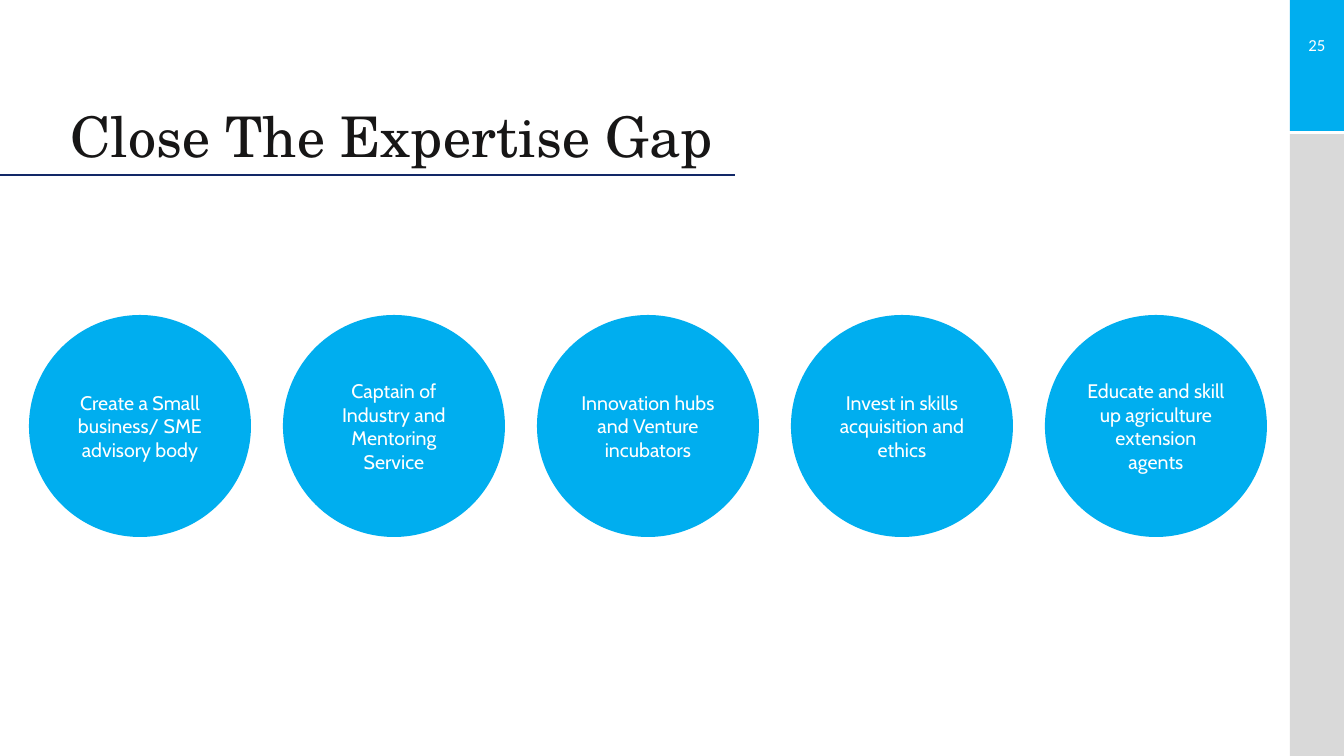
"""Build the slide on closing the expertise gap."""
from dataclasses import dataclass

import pptx
import pptx.dml.color
import pptx.enum.shapes
import pptx.enum.text
import pptx.oxml
import pptx.util

EMU_PER_PX = 914400 / 100.8
SHAPE = pptx.enum.shapes.MSO_SHAPE
ALIGN = pptx.enum.text.PP_ALIGN
ANCHOR = pptx.enum.text.MSO_ANCHOR
EFFECTS = '<a:effectLst xmlns:a="http://schemas.openxmlformats.org/drawingml/2006/main"/>'


def px(n):
    return pptx.util.Emu(round(n * EMU_PER_PX))


def rgb(value):
    return pptx.dml.color.RGBColor.from_string(value)


@dataclass(frozen=True)
class Theme:
    accent: str = "00AEEF"
    sidebar: str = "D9D9D9"
    rule: str = "122867"
    ink: str = "171616"
    white: str = "FFFFFF"
    title_font: str = "TeX Gyre Schola"
    body_font: str = "Cabin"
    number_font: str = "Calibri"
    title_size: int = 40
    body_size: int = 14
    number_size: int = 12


class Deck:
    def __init__(self, theme):
        self.theme = theme
        self.prs = pptx.Presentation()
        self.prs.slide_width, self.prs.slide_height = px(1344), px(756)
        self.s = self.prs.slides.add_slide(self.prs.slide_layouts[5])

    def label(self, tf, text, font, size, color, align, anchor):
        tf.word_wrap = True
        tf.auto_size = pptx.enum.text.MSO_AUTO_SIZE.NONE
        tf.vertical_anchor = anchor
        tf.text = text
        p = tf.paragraphs[0]
        p.alignment = align
        r = p.runs[0]
        r.font.name, r.font.size = font, pptx.util.Pt(size)
        r.font.color.rgb = rgb(color)
        return p

    def title(self, text, x, y, w, h):
        t, sp = self.theme, self.s.shapes.title
        sp.left, sp.top, sp.width, sp.height = map(px, (x, y, w, h))
        p = self.label(sp.text_frame, text, t.title_font, t.title_size, t.ink,
                       ALIGN.LEFT, ANCHOR.BOTTOM)
        p.line_spacing = 0.9

    def shape(self, kind, x, y, w, h, fill):
        sp = self.s.shapes.add_shape(kind, *map(px, (x, y, w, h)))
        sp.shadow.inherit = False
        sp.fill.solid()
        sp.fill.fore_color.rgb = rgb(fill)
        sp.line.fill.background()
        return sp

    def circle(self, text, x, y, d):
        t = self.theme
        tf = self.shape(SHAPE.OVAL, x, y, d, d, t.accent).text_frame
        tf.margin_left = tf.margin_right = px(9)
        self.label(tf, text, t.body_font, t.body_size, t.white, ALIGN.CENTER, ANCHOR.MIDDLE)

    def number(self, text, x, y, w, h):
        t = self.theme
        tf = self.s.shapes.add_textbox(*map(px, (x, y, w, h))).text_frame
        self.label(tf, text, t.number_font, t.number_size, t.white, ALIGN.CENTER, ANCHOR.MIDDLE)

    def rule(self, x1, x2, y):
        line = self.s.shapes.add_connector(
            pptx.enum.shapes.MSO_CONNECTOR.STRAIGHT, *map(px, (x1, y, x2, y)))
        line.line.color.rgb = rgb(self.theme.rule)
        line.line.width = pptx.util.Pt(1.5)
        line._element.spPr.append(pptx.oxml.parse_xml(EFFECTS))


def main():
    theme = Theme()
    deck = Deck(theme)
    deck.shape(SHAPE.RECTANGLE, 1290, 0, 54, 131, theme.accent)
    deck.shape(SHAPE.RECTANGLE, 1290, 134, 54, 622, theme.sidebar)
    deck.number("25", 1284, 30, 66, 30)
    deck.rule(0, 735, 175)
    deck.title("Close The Expertise Gap", 60, 93, 850, 82)
    actions = (
        "Create a Small business/ SME advisory body",
        "Captain of Industry and Mentoring Service",
        "Innovation hubs and Venture incubators",
        "Invest in skills acquisition and ethics",
        "Educate and skill up agriculture extension agents",
    )
    for i, action in enumerate(actions):
        deck.circle(action, 29 + 254 * i, 315, 222)
    deck.prs.save("out.pptx")


if __name__ == "__main__":
    main()
